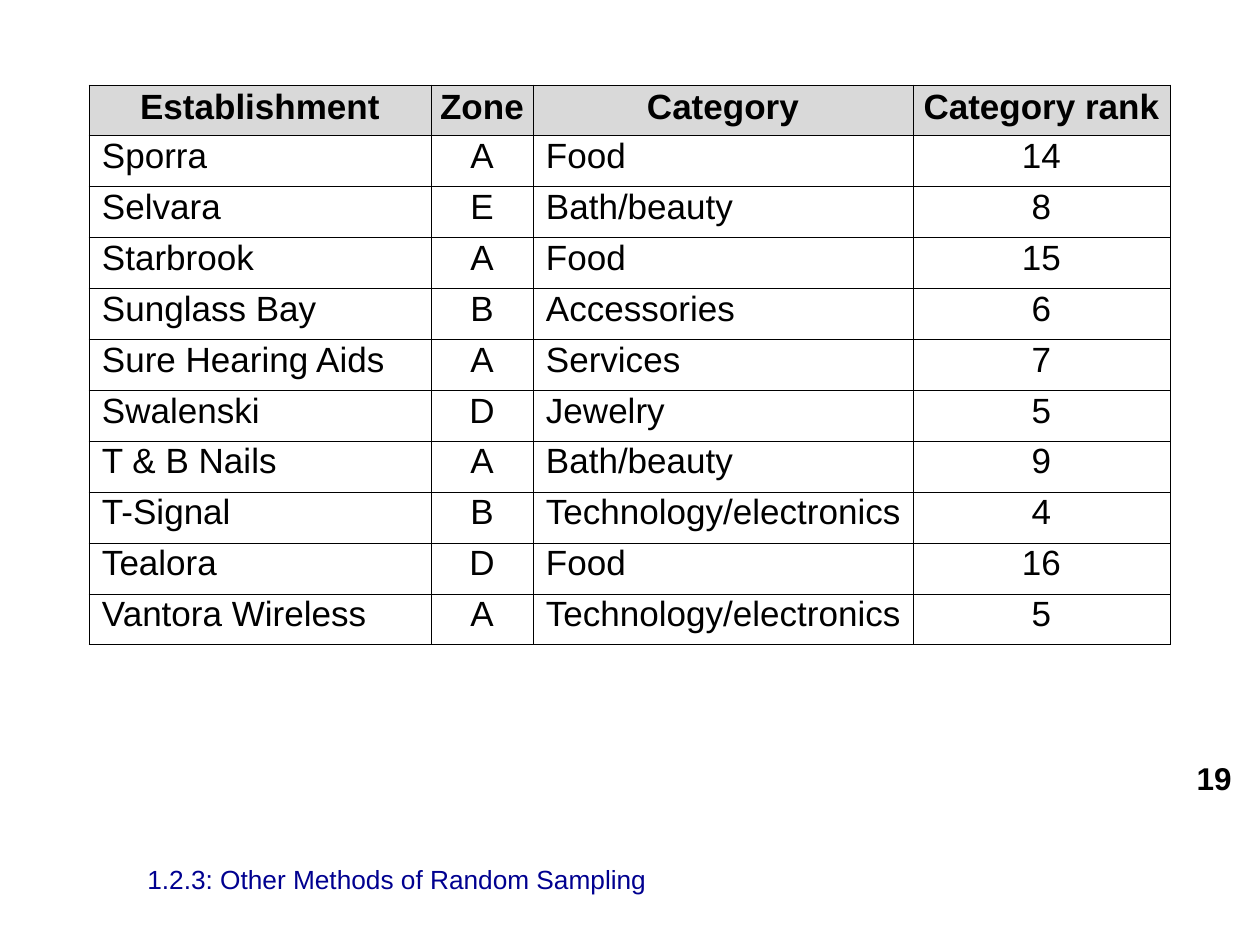
from dataclasses import dataclass

from lxml.etree import SubElement
from pptx import Presentation
from pptx.dml.color import RGBColor
from pptx.enum.text import MSO_ANCHOR as Anchor, PP_ALIGN as Align
from pptx.oxml.ns import qn
from pptx.util import Pt

EMU_PER_PX = 914400 / 126


@dataclass(frozen=True)
class Theme:
    font: str = "Arial"
    ink: str = "000000"
    footer_ink: str = "000090"
    header_fill: str = "D9D9D9"
    body_fill: str = "FFFFFF"
    table_size: int = 20
    number_size: int = 18
    footer_size: int = 15
    border_width: float = 0.5


THEME = Theme()

COLUMN_WIDTHS = (342, 102, 380, 257)
COLUMN_ALIGNMENTS = (Align.LEFT, Align.CENTER, Align.LEFT, Align.CENTER)
HEADINGS = ("Establishment", "Zone", "Category", "Category rank")
ESTABLISHMENTS = (
    ("Sporra", "A", "Food", 14),
    ("Selvara", "E", "Bath/beauty", 8),
    ("Starbrook", "A", "Food", 15),
    ("Sunglass Bay", "B", "Accessories", 6),
    ("Sure Hearing Aids", "A", "Services", 7),
    ("Swalenski", "D", "Jewelry", 5),
    ("T & B Nails", "A", "Bath/beauty", 9),
    ("T-Signal", "B", "Technology/electronics", 4),
    ("Tealora", "D", "Food", 16),
    ("Vantora Wireless", "A", "Technology/electronics", 5),
)


def px(length):
    return round(length * EMU_PER_PX)


def format_text(text_frame, size, color, alignment, bold=False):
    paragraph = text_frame.paragraphs[0]
    paragraph.alignment = alignment
    for run in paragraph.runs:
        run.font.name = THEME.font
        run.font.size = Pt(size)
        run.font.bold = bold
        run.font.color.rgb = RGBColor.from_string(color)


def set_borders(cell):
    properties = cell._tc.get_or_add_tcPr()
    for position, side in enumerate(("lnL", "lnR", "lnT", "lnB")):
        line = SubElement(properties, qn(f"a:{side}"), w=str(Pt(THEME.border_width)))
        fill = SubElement(line, qn("a:solidFill"))
        SubElement(fill, qn("a:srgbClr"), val=THEME.ink)
        # Border lines come before the fill of the cell
        properties.insert(position, line)


def style_cell(cell, is_header, alignment):
    cell.fill.solid()
    fill = THEME.header_fill if is_header else THEME.body_fill
    cell.fill.fore_color.rgb = RGBColor.from_string(fill)
    set_borders(cell)
    cell.vertical_anchor = Anchor.MIDDLE if is_header else Anchor.TOP
    cell.margin_left = px(13 if alignment == Align.LEFT else 1)
    cell.margin_right = px(1)
    cell.margin_top = px(0 if is_header else 1)
    cell.margin_bottom = px(6 if is_header else 0)
    format_text(cell.text_frame, THEME.table_size, THEME.ink, alignment, is_header)


def add_establishment_table(slide, left, top, width, height):
    rows = (HEADINGS, *ESTABLISHMENTS)
    table = slide.shapes.add_table(
        len(rows), len(HEADINGS), px(left), px(top), px(width), px(height)
    ).table
    for column, column_width in zip(table.columns, COLUMN_WIDTHS):
        column.width = px(column_width * width / sum(COLUMN_WIDTHS))
    for row_index, values in enumerate(rows):
        table.rows[row_index].height = px(height / len(rows))
        is_header = row_index == 0
        for column_index, value in enumerate(values):
            cell = table.cell(row_index, column_index)
            cell.text_frame.text = str(value)
            alignment = Align.CENTER if is_header else COLUMN_ALIGNMENTS[column_index]
            style_cell(cell, is_header, alignment)


def add_label(slide, left, top, width, height, text, size, color, alignment, bold=False):
    shape = slide.shapes.add_textbox(px(left), px(top), px(width), px(height))
    text_frame = shape.text_frame
    text_frame.word_wrap = True
    text_frame.vertical_anchor = Anchor.MIDDLE
    text_frame.text = text
    format_text(text_frame, size, color, alignment, bold)


def main():
    presentation = Presentation()
    presentation.slide_width = px(1260)
    presentation.slide_height = px(945)
    slide = presentation.slides.add_slide(presentation.slide_layouts[6])

    # Page number
    add_label(slide, 1143, 758, 101, 39, "19",
              THEME.number_size, THEME.ink, Align.RIGHT, bold=True)
    # Lesson footer
    add_label(slide, 135, 861, 791, 37, "1.2.3: Other Methods of Random Sampling",
              THEME.footer_size, THEME.footer_ink, Align.LEFT)
    # Sampled establishments
    add_establishment_table(slide, 89, 85, 1081, 560)

    presentation.save("out.pptx")


if __name__ == "__main__":
    main()
